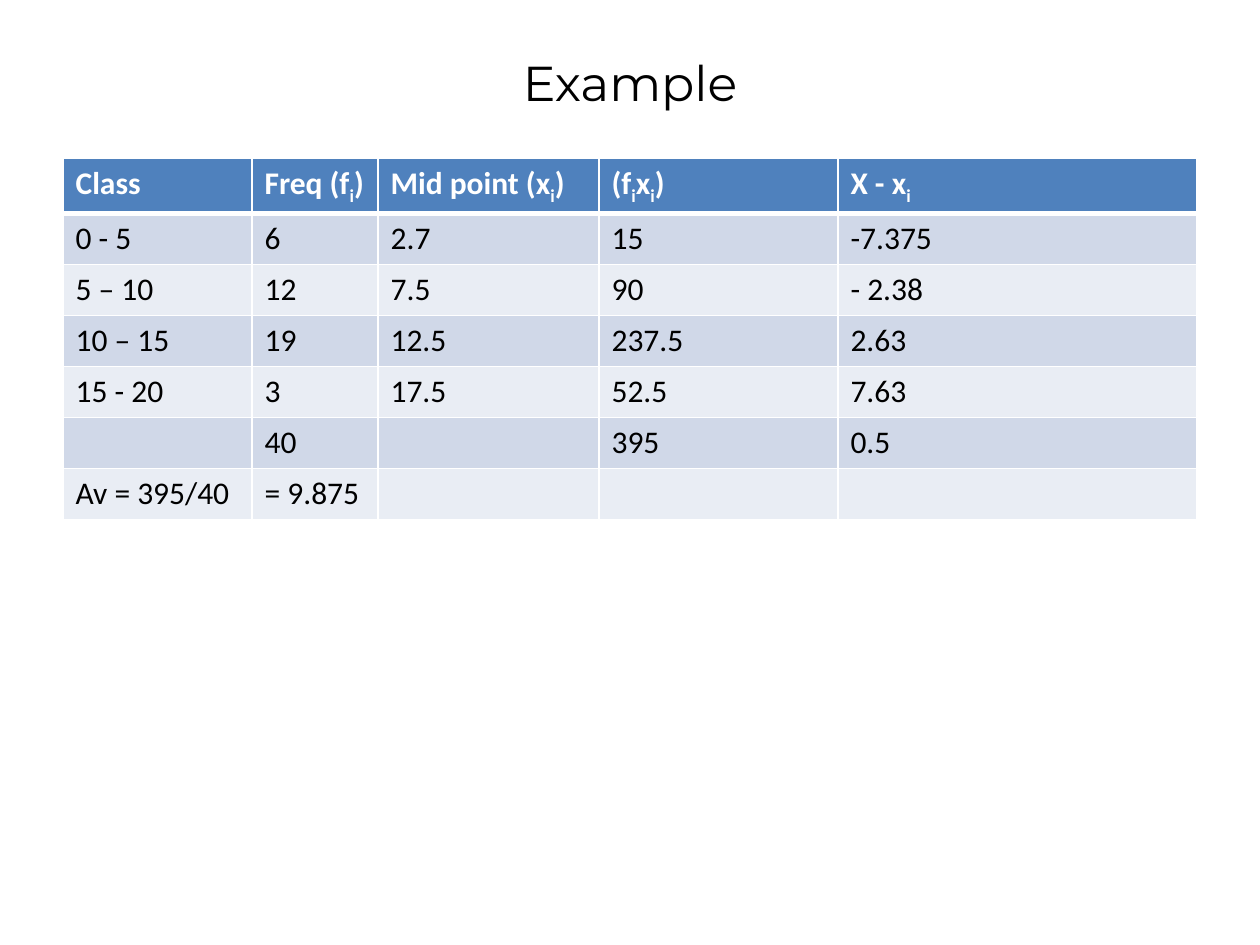
import pptx
import pptx.dml.color
import pptx.enum.text
import pptx.oxml
import pptx.oxml.ns
import pptx.util

RGB = pptx.dml.color.RGBColor
BLACK = RGB(0x00, 0x00, 0x00)
WHITE = RGB(0xFF, 0xFF, 0xFF)
BLUE = RGB(0x4F, 0x81, 0xBD)
BANDS = [RGB(0xD0, 0xD8, 0xE8), RGB(0xE9, 0xED, 0xF4)]

TITLE = "Example"
# Text between two underscores is subscript.
HEAD = ["Class", "Freq (f_i_)", "Mid point (x_i_)", "(f_i_x_i_)", "X - x_i_"]
BODY = [
    ["0 - 5", "6", "2.7", "15", "-7.375"],
    ["5 – 10", "12", "7.5", "90", "- 2.38"],
    ["10 – 15", "19", "12.5", "237.5", "2.63"],
    ["15 - 20", "3", "17.5", "52.5", "7.63"],
    ["", "40", "", "395", "0.5"],
    ["Av = 395/40", "= 9.875", "", "", ""],
]
WIDTHS = [189, 126, 221, 239, 359]
ROW = 51
LEFT = 63


def px(count):
    return pptx.util.Emu(round(count * 914400 / 126))


def style(run, face, size, color, bold=False):
    font = run.font
    font.name, font.size, font.bold = face, pptx.util.Pt(size), bold
    font.color.rgb = color


def border(cell, low):
    """Draw white cell edges, 1 pt wide except the bottom one of low pt."""
    props = cell._tc.get_or_add_tcPr()
    for side, width in zip("LRTB", (1, 1, 1, low)):
        props.append(pptx.oxml.parse_xml(
            f'<a:ln{side} {pptx.oxml.ns.nsdecls("a")} w="{pptx.util.Pt(width)}">'
            f'<a:solidFill><a:srgbClr val="{WHITE}"/></a:solidFill></a:ln{side}>'))


def write(cell, text, color, bold):
    para = cell.text_frame.paragraphs[0]
    for place, part in enumerate(text.split("_")):
        if part:
            run = para.add_run()
            run.text = part
            style(run, "Calibri", 18, color, bold)
            if place % 2:
                run.font._element.set("baseline", "-25000")


def add_title(slide):
    box = slide.shapes.add_textbox(px(LEFT), px(38), px(sum(WIDTHS)), px(88))
    frame = box.text_frame
    frame.word_wrap = True
    frame.vertical_anchor = pptx.enum.text.MSO_ANCHOR.MIDDLE
    frame.text = TITLE
    para = frame.paragraphs[0]
    para.alignment = pptx.enum.text.PP_ALIGN.CENTER
    style(para.runs[0], "Montserrat", 28, BLACK)


def add_grid(slide):
    rows = [HEAD] + BODY
    table = slide.shapes.add_table(
        len(rows), len(WIDTHS), px(LEFT), px(158),
        px(sum(WIDTHS)), px(ROW * len(rows))).table
    for col, width in zip(table.columns, WIDTHS):
        col.width = px(width)
    for r, texts in enumerate(rows):
        table.rows[r].height = px(ROW)
        head = r == 0
        for c, text in enumerate(texts):
            cell = table.cell(r, c)
            border(cell, 3 if head else 1)
            cell.fill.solid()
            cell.fill.fore_color.rgb = BLUE if head else BANDS[(r - 1) % 2]
            write(cell, text, WHITE if head else BLACK, head)


def main():
    deck = pptx.Presentation()
    deck.slide_width, deck.slide_height = px(1260), px(945)
    slide = deck.slides.add_slide(deck.slide_layouts[6])
    add_title(slide)
    add_grid(slide)
    deck.save("out.pptx")


if __name__ == "__main__":
    main()
